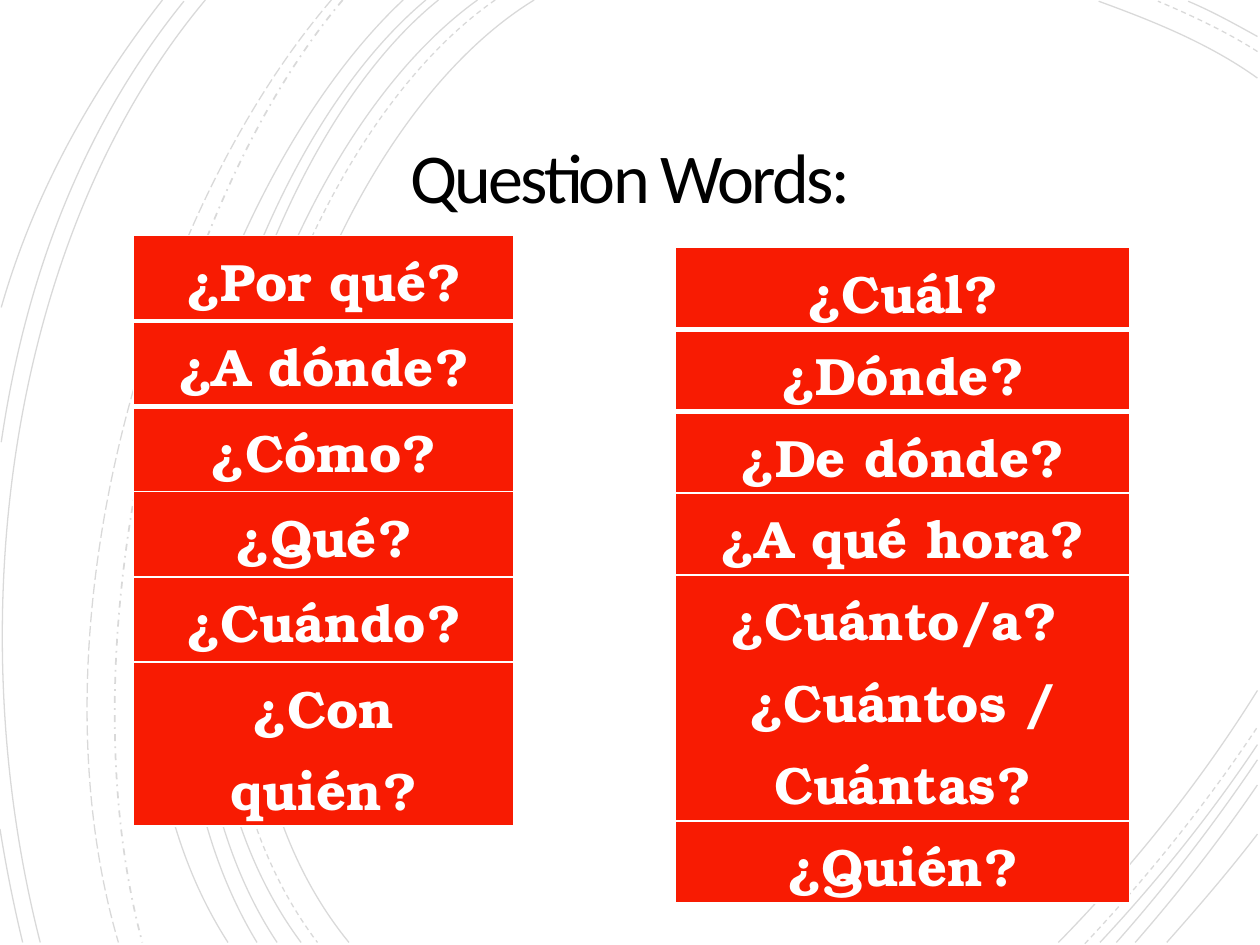
"""Build the slide of Spanish question words over thin sweeping arcs."""
from dataclasses import dataclass

from lxml import etree
from pptx import Presentation
from pptx import util as u
from pptx.dml.color import RGBColor
from pptx.enum import dml, text
from pptx.oxml.ns import qn


@dataclass(frozen=True)
class Theme:
    ink: RGBColor = RGBColor(0x00, 0x00, 0x00)
    paper: RGBColor = RGBColor(0xFF, 0xFF, 0xFF)
    red: RGBColor = RGBColor(0xF8, 0x1B, 0x02)
    title_font: str = "Calibri"
    title_size: int = 40
    title_tracking: int = -150
    word_font: str = "TeX Gyre Bonum"
    word_size: int = 30
    word_spacing: float = 1.07
    rule_weight: int = 3
    arc_alpha: int = 15000


THEME = Theme()
HEADING = "Question Words:"
HEADING_BOX = (3.67, 2.21, 18.06, 2.92)
HEADING_INSET = 0.64
CM_PER_INCH = 2.54

WORD_TABLES = [
    {
        "words": ["¿Por qué?", "¿A dónde?", "¿Cómo?", "¿Qué?", "¿Cuándo?", "¿Con quién?"],
        "left": 2.69, "top": 4.75, "width": 7.67, "inset": 0.58,
        "heights": [1.72] * 5 + [3.3],
    },
    {
        "words": ["¿Cuál?", "¿Dónde?", "¿De dónde?", "¿A qué hora?",
                  "¿Cuánto/a? \n¿Cuántos / Cuántas?", "¿Quién?"],
        "left": 13.62, "top": 4.99, "width": 9.15, "inset": 0.18,
        "heights": [1.65] * 4 + [4.96, 1.65],
    },
]

# Start, two control points and end of each arc, in inches
ARCS = {
    (dml.MSO_LINE.SOLID, 0.75): [
        [(4.24, 0), (2.36, 1.15), (1.07, 5.4), (2.77, 7.48)],
        [(3.79, 0), (2.02, 1.27), (0.82, 5.37), (2.39, 7.48)],
        [(3.48, 0), (1.83, 1.33), (0.82, 5.41), (2.2, 7.48)],
        [(3.38, 0), (1.73, 1.38), (0.73, 5.33), (2.04, 7.48)],
        [(3.2, 0), (1.63, 1.47), (0.4, 5.29), (1.81, 7.48)],
        [(1.63, 0), (0.08, 1.85), (-0.34, 4.9), (0.32, 7.48)],
        [(1.46, 0.01), (0.69, 0.96), (0.21, 2.14), (0.01, 3.51)],
        [(1.29, 0), (0.75, 0.69), (0.28, 1.5), (0.01, 2.44)],
        [(0, 6.58), (0.05, 6.89), (0.11, 7.19), (0.18, 7.48)],
        [(9.98, 0.62), (9.59, 0.34), (9.13, 0.16), (8.72, 0.01)],
        [(9.98, 0.29), (9.8, 0.19), (9.62, 0.09), (9.43, 0.01)],
        [(8.4, 7.48), (8.97, 6.9), (9.52, 6.22), (9.98, 5.48)],
        [(8.73, 7.48), (9.17, 7.01), (9.6, 6.48), (9.98, 5.91)],
        [(8.86, 7.48), (9.25, 7.04), (9.63, 6.55), (9.98, 6.03)],
        [(9.01, 7.48), (9.35, 7.09), (9.68, 6.67), (9.98, 6.23)],
        [(9.26, 7.48), (9.5, 7.21), (9.75, 6.92), (9.98, 6.62)],
    ],
    (dml.MSO_LINE.DASH, 0.75): [
        [(3.93, 0), (2.13, 1.25), (0.92, 5.37), (2.52, 7.48)],
        [(9.98, 0.41), (9.73, 0.25), (9.45, 0.12), (9.19, 0.01)],
        [(8.61, 7.49), (9.09, 6.98), (9.56, 6.4), (9.98, 5.77)],
    ],
    (dml.MSO_LINE.DASH_DOT, 1): [
        [(2.72, 0), (1.32, 1.66), (0.49, 5.09), (1.13, 7.48)],
    ],
    (dml.MSO_LINE.LONG_DASH, 0.75): [
        [(2.63, 0), (1.18, 1.69), (0.21, 4.99), (0.94, 7.48)],
    ],
}


def draw_arc(slide, points, dash, weight):
    """Draw one translucent Bezier arc through its four points."""
    start, *rest = [tuple(u.Cm(CM_PER_INCH * v) for v in point) for point in points]
    builder = slide.shapes.build_freeform(*start)
    builder.add_line_segments(rest, close=False)
    arc = builder.convert_to_shape()
    arc.shadow.inherit = False
    arc.fill.background()
    arc.line.color.rgb = THEME.ink
    arc.line.width = u.Pt(weight)
    arc.line.dash_style = dash
    ink = arc.line._get_or_add_ln().find(".//" + qn("a:srgbClr"))
    etree.SubElement(ink, qn("a:alpha"), val=str(THEME.arc_alpha))
    outline = arc.element.find(".//" + qn("a:path"))
    curve = etree.SubElement(outline, qn("a:cubicBezTo"))
    for segment in outline.findall(qn("a:lnTo")):
        curve.append(segment[0])
        outline.remove(segment)


def draw_heading(slide):
    """Place the centred heading."""
    frame = slide.shapes.add_textbox(*map(u.Cm, HEADING_BOX)).text_frame
    frame.word_wrap = True
    frame.vertical_anchor = text.MSO_ANCHOR.MIDDLE
    frame.margin_left = frame.margin_right = u.Cm(HEADING_INSET)
    frame.margin_top = frame.margin_bottom = u.Cm(HEADING_INSET)
    heading = frame.paragraphs[0]
    heading.text = HEADING
    heading.alignment = text.PP_ALIGN.CENTER
    heading.line_spacing = 0.85
    heading.font.name = THEME.title_font
    heading.font.size = u.Pt(THEME.title_size)
    heading.font.color.rgb = THEME.ink
    heading.runs[0].font._element.set("spc", str(THEME.title_tracking))


def draw_rule(cell, side):
    """Give one side of a cell the heavy white rule."""
    rule = etree.Element(qn(side), w=str(u.Pt(THEME.rule_weight)))
    fill = etree.SubElement(rule, qn("a:solidFill"))
    etree.SubElement(fill, qn("a:srgbClr"), val=str(THEME.paper))
    cell._tc.get_or_add_tcPr().insert(0, rule)


def draw_words(slide, words, left, top, width, inset, heights):
    """Place one single-column table of question words."""
    box = map(u.Cm, (left, top, width, sum(heights)))
    table = slide.shapes.add_table(len(words), 1, *box).table
    table.horz_banding = False
    for row, word, height in zip(table.rows, words, heights):
        row.height = u.Cm(height)
        cell = row.cells[0]
        cell.fill.solid()
        cell.fill.fore_color.rgb = THEME.red
        cell.margin_left = cell.margin_right = u.Cm(inset)
        cell.margin_top = cell.margin_bottom = 0
        cell.text = word
        for line in cell.text_frame.paragraphs:
            line.alignment = text.PP_ALIGN.CENTER
            line.line_spacing = THEME.word_spacing
            line.font.name = THEME.word_font
            line.font.size = u.Pt(THEME.word_size)
            line.font.bold = True
            line.font.color.rgb = THEME.paper
    draw_rule(table.cell(0, 0), "a:lnB")
    draw_rule(table.cell(1, 0), "a:lnT")


def main():
    """Assemble and save the slide."""
    deck = Presentation()
    deck.slide_width, deck.slide_height = u.Cm(25.4), u.Cm(19.05)
    slide = deck.slides.add_slide(deck.slide_layouts[6])
    slide.background.fill.solid()
    slide.background.fill.fore_color.rgb = THEME.paper
    for (dash, weight), arcs in ARCS.items():
        for points in arcs:
            draw_arc(slide, points, dash, weight)
    draw_heading(slide)
    for word_table in WORD_TABLES:
        draw_words(slide, **word_table)
    deck.save("out.pptx")


if __name__ == "__main__":
    main()
